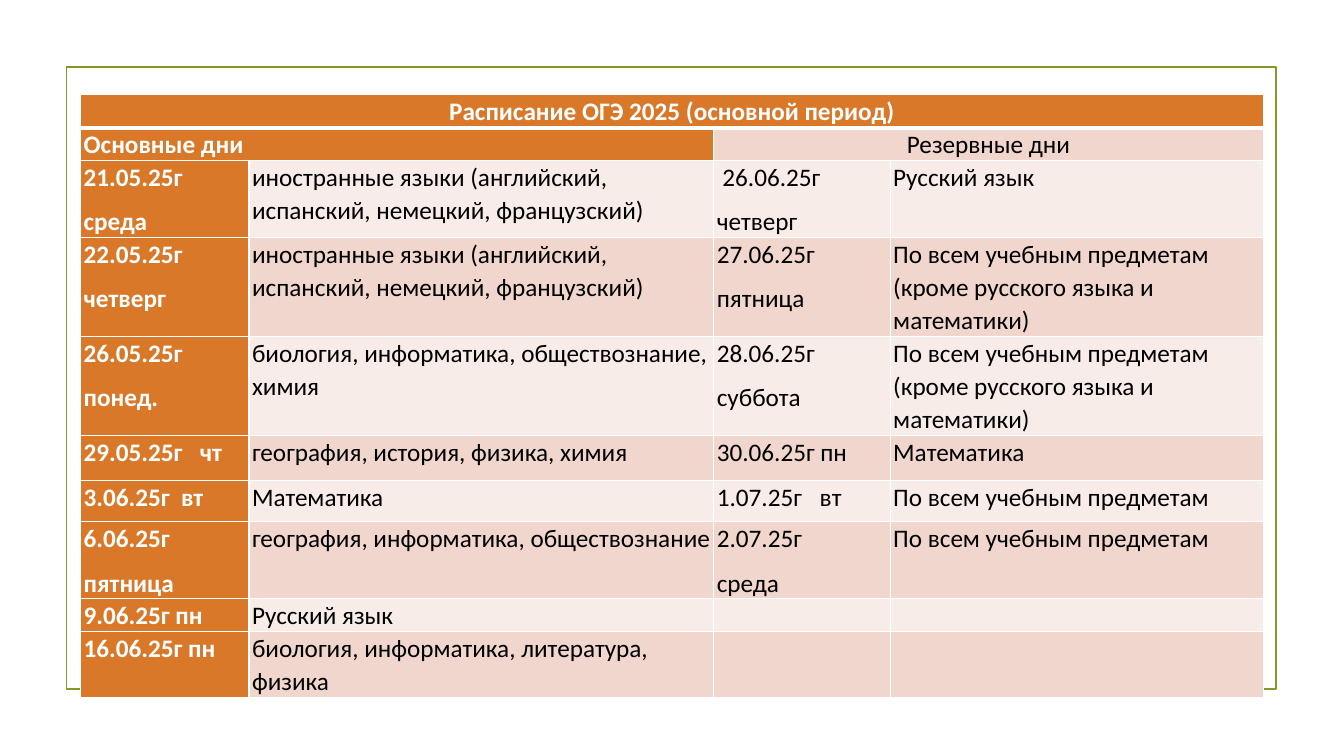
from dataclasses import dataclass

from lxml import etree
from pptx import Presentation
from pptx.dml.color import RGBColor
from pptx.enum.shapes import MSO_SHAPE
from pptx.enum.text import PP_ALIGN
from pptx.oxml.ns import qn
from pptx.util import Pt

RECTANGLE = MSO_SHAPE.RECTANGLE
LEFT, CENTER = PP_ALIGN.LEFT, PP_ALIGN.CENTER

FONT = "Calibri"
WHITE = RGBColor(0xFF, 0xFF, 0xFF)
BLACK = RGBColor(0x00, 0x00, 0x00)
GREEN = RGBColor(0x83, 0x99, 0x2A)
ORANGE = RGBColor(0xD9, 0x78, 0x28)
BANDS = (RGBColor(0xF8, 0xEC, 0xE8), RGBColor(0xF1, 0xD6, 0xCD))

COLUMN_WIDTHS = (120.25, 332, 126, 266.5)
HEADER_HEIGHT = 18.75
HEADER_ROWS = 2
TITLE_RULE = 3


@dataclass(frozen=True)
class Day:
    """Lines of a date cell; a tab in a line goes to the tab stop."""
    lines: tuple[str, ...] = ()
    tab: float = 0
    indent: float = 0


@dataclass(frozen=True)
class ExamRow:
    height: float
    main_day: Day
    main_subjects: str
    reserve_day: Day = Day()
    reserve_subjects: str = ""


LANGUAGES = "иностранные языки (английский, испанский, немецкий, французский)"
ALL_SUBJECTS = "По всем учебным предметам"
MOST_SUBJECTS = ALL_SUBJECTS + " (кроме русского языка и математики)"

EXAMS = (
    ExamRow(46, Day(("21.05.25г", "среда")), LANGUAGES,
            Day(("26.06.25г", "четверг"), indent=4), "Русский язык"),
    ExamRow(46, Day(("22.05.25г", "четверг")), LANGUAGES,
            Day(("27.06.25г", "пятница")), MOST_SUBJECTS),
    ExamRow(46, Day(("26.05.25г", "понед.")),
            "биология, информатика, обществознание, химия",
            Day(("28.06.25г", "суббота")), MOST_SUBJECTS),
    ExamRow(32.4, Day(("29.05.25г\tчт",), tab=83),
            "география, история, физика, химия",
            Day(("30.06.25г пн",)), "Математика"),
    ExamRow(29.5, Day(("3.06.25г\tвт",), tab=69.5), "Математика",
            Day(("1.07.25г\tвт",), tab=73.5), ALL_SUBJECTS),
    ExamRow(46, Day(("6.06.25г", "пятница")),
            "география, информатика, обществознание",
            Day(("2.07.25г", "среда")), ALL_SUBJECTS),
    ExamRow(20.9, Day(("9.06.25г пн",)), "Русский язык"),
    ExamRow(41.8, Day(("16.06.25г пн",)),
            "биология, информатика, литература, физика"),
)


def add_border(cell, side: str, width: float) -> None:
    line = etree.SubElement(cell._tc.get_or_add_tcPr(), qn(f"a:ln{side}"),
                            w=str(Pt(width)))
    fill = etree.SubElement(line, qn("a:solidFill"))
    etree.SubElement(fill, qn("a:srgbClr"), val=str(WHITE))


def format_cell(cell, row: int, fill: RGBColor) -> None:
    cell.margin_left = cell.margin_right = Pt(2.2)
    cell.margin_top = cell.margin_bottom = Pt(0)
    for side in "LRTB":
        under_title = (row, side) in ((0, "B"), (1, "T"))
        add_border(cell, side, TITLE_RULE if under_title else 1)
    cell.fill.solid()
    cell.fill.fore_color.rgb = fill


def write_cell(cell, day: Day, heading: bool, align=LEFT) -> None:
    frame = cell.text_frame
    for index, line in enumerate(day.lines):
        para = frame.add_paragraph() if index else frame.paragraphs[0]
        para.alignment = align
        para.line_spacing = 1.07
        para.space_after = Pt(8)
        properties = para._p.get_or_add_pPr()
        if day.indent and index == 0:
            properties.set("marL", str(Pt(day.indent)))
        if day.tab:
            tabs = etree.SubElement(properties, qn("a:tabLst"))
            etree.SubElement(tabs, qn("a:tab"), pos=str(Pt(day.tab)), algn="l")
        span = para.add_run()
        span.text = line
        span.font.name = FONT
        span.font.size = Pt(18)
        span.font.bold = heading
        span.font.color.rgb = WHITE if heading else BLACK


def add_frame(page) -> None:
    box = page.shapes.add_shape(RECTANGLE, Pt(47.5), Pt(48), Pt(864), Pt(444))
    box.shadow.inherit = False
    box.fill.background()
    box.line.color.rgb = GREEN
    box.line.width = Pt(1.25)


def add_schedule(page) -> None:
    heights = [HEADER_HEIGHT] * HEADER_ROWS + [exam.height for exam in EXAMS]
    table = page.shapes.add_table(
        len(heights), len(COLUMN_WIDTHS), Pt(57.6), Pt(67.7),
        Pt(sum(COLUMN_WIDTHS)), Pt(sum(heights))).table
    table.horz_banding = False
    for column, width in zip(table.columns, COLUMN_WIDTHS):
        column.width = Pt(width)

    # Fills and borders
    for row, height in enumerate(heights):
        table.rows[row].height = Pt(height)
        for column in range(len(COLUMN_WIDTHS)):
            accent = row == 0 or column == 0 or (row == 1 and column == 1)
            format_cell(table.cell(row, column), row,
                        ORANGE if accent else BANDS[row % 2])

    # Merged headings
    table.cell(0, 0).merge(table.cell(0, 3))
    table.cell(1, 0).merge(table.cell(1, 1))
    table.cell(1, 2).merge(table.cell(1, 3))
    write_cell(table.cell(0, 0), Day(("Расписание ОГЭ 2025 (основной период)",)),
               True, CENTER)
    write_cell(table.cell(1, 0), Day(("Основные дни",)), True)
    write_cell(table.cell(1, 2), Day(("Резервные дни",)), False, CENTER)

    # Exam days
    for row, exam in enumerate(EXAMS, start=HEADER_ROWS):
        write_cell(table.cell(row, 0), exam.main_day, True)
        write_cell(table.cell(row, 1), Day((exam.main_subjects,)), False)
        if exam.reserve_subjects:
            write_cell(table.cell(row, 2), exam.reserve_day, False)
            write_cell(table.cell(row, 3), Day((exam.reserve_subjects,)), False)


def main() -> None:
    deck = Presentation()
    deck.slide_width, deck.slide_height = Pt(960), Pt(540)
    page = deck.slides.add_slide(deck.slide_layouts[6])
    add_frame(page)
    add_schedule(page)
    deck.save("out.pptx")


if __name__ == "__main__":
    main()
